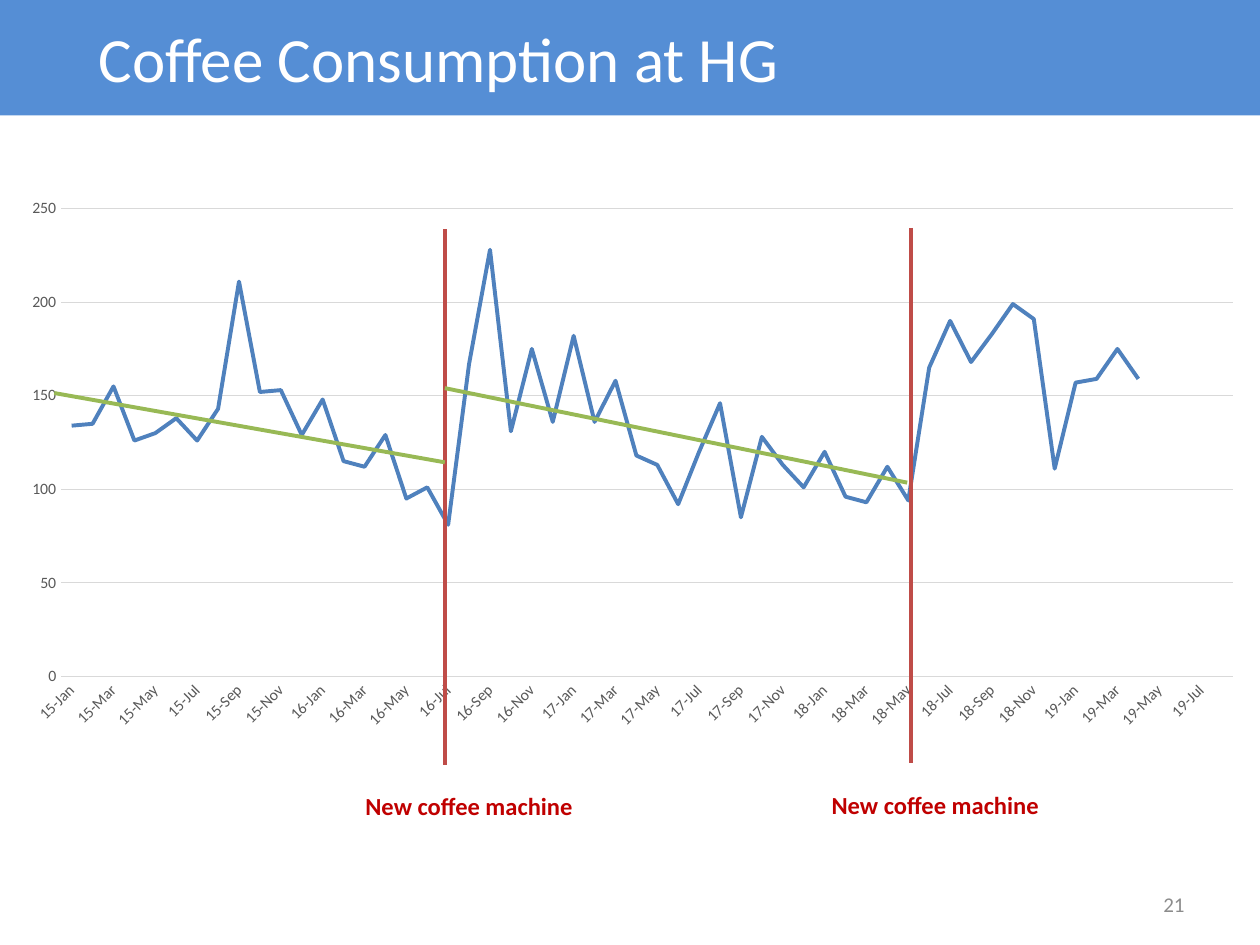
from lxml import etree
from pptx import Presentation
from pptx.chart.data import CategoryChartData
from pptx.dml.color import RGBColor
from pptx.enum.chart import XL_CHART_TYPE, XL_TICK_MARK
from pptx.enum.shapes import MSO_CONNECTOR, MSO_SHAPE
from pptx.enum.text import MSO_ANCHOR, PP_ALIGN
from pptx.oxml.ns import qn
from pptx.util import Pt

LINE_CHART = XL_CHART_TYPE.LINE
NO_TICK = XL_TICK_MARK.NONE
STRAIGHT = MSO_CONNECTOR.STRAIGHT
RECTANGLE = MSO_SHAPE.RECTANGLE
TOP, MIDDLE = MSO_ANCHOR.TOP, MSO_ANCHOR.MIDDLE
LEFT, RIGHT = PP_ALIGN.LEFT, PP_ALIGN.RIGHT

FONT = "Calibri"
WHITE = RGBColor(0xFF, 0xFF, 0xFF)
BANNER_BLUE = RGBColor(0x55, 0x8E, 0xD5)
SERIES_BLUE = RGBColor(0x4F, 0x81, 0xBD)
GRID_GRAY = RGBColor(0xD9, 0xD9, 0xD9)
AXIS_GRAY = RGBColor(0x59, 0x59, 0x59)
NUMBER_GRAY = RGBColor(0x8C, 0x8C, 0x8C)
MARKER_RED = RGBColor(0xBF, 0x4C, 0x48)
LABEL_RED = RGBColor(0xC0, 0x00, 0x00)
TREND_GREEN = RGBColor(0x98, 0xB9, 0x55)
BLACK = RGBColor(0, 0, 0)

MONTHS = ["Jan", "Feb", "Mar", "Apr", "May", "Jun",
          "Jul", "Aug", "Sep", "Oct", "Nov", "Dec"]
CATEGORIES = [f"{year}-{month}" for year in range(15, 20) for month in MONTHS][:56]
CUPS = [
    134, 135, 155, 126, 130, 138, 126, 143, 211, 152, 153, 129,
    148, 115, 112, 129, 95, 101, 81, 167, 228, 131, 175, 136,
    182, 136, 158, 118, 113, 92, 120, 146, 85, 128, 113, 101,
    120, 96, 93, 112, 94, 165, 190, 168, 183, 199, 191, 111,
    157, 159, 175, 159,
]
CUPS += [None] * (len(CATEGORIES) - len(CUPS))


def points(*lengths):
    return [Pt(length) for length in lengths]


def write_text(shape, text, size, color, bold=False, align=LEFT, anchor=TOP, wrap=True):
    frame = shape.text_frame
    frame.word_wrap = wrap
    frame.vertical_anchor = anchor
    para = frame.paragraphs[0]
    para.alignment = align
    span = para.add_run()
    span.text = text
    span.font.name = FONT
    span.font.size = Pt(size)
    span.font.bold = bold
    span.font.color.rgb = color
    return para


def add_line(page, start, end, color):
    line = page.shapes.add_connector(STRAIGHT, *points(*start, *end))
    line.line.color.rgb = color
    line.line.width = Pt(2.25)
    etree.SubElement(line._element.spPr, qn("a:effectLst"))


def add_banner(page, box, text):
    banner = page.shapes.add_shape(RECTANGLE, *points(*box))
    banner.shadow.inherit = False
    banner.fill.solid()
    banner.fill.fore_color.rgb = BANNER_BLUE
    banner.line.fill.background()
    para = write_text(banner, text, 36, WHITE, anchor=MIDDLE)
    para._p.get_or_add_pPr().set("marL", str(Pt(49.5)))


def set_plot_layout(chart, x, y, w, h):
    """Fix the inner plot area, as fractions of the chart's size."""
    plot_area = chart._chartSpace.chart.plotArea
    for old in plot_area.findall(qn("c:layout")):
        plot_area.remove(old)
    layout = etree.Element(qn("c:layout"))
    manual = etree.SubElement(layout, qn("c:manualLayout"))
    settings = [("layoutTarget", "inner"), ("xMode", "edge"), ("yMode", "edge"),
                ("x", x), ("y", y), ("w", w), ("h", h)]
    for name, value in settings:
        etree.SubElement(manual, qn(f"c:{name}")).set("val", str(value))
    plot_area.insert(0, layout)


def format_axis(axis):
    axis.major_tick_mark = NO_TICK
    axis.minor_tick_mark = NO_TICK
    font = axis.tick_labels.font
    font.name = FONT
    font.size = Pt(9)
    font.color.rgb = AXIS_GRAY


def slant_alternate_labels(axis):
    """Show every second category label, turned by 45 degrees."""
    body = axis._element.find(qn("c:txPr")).find(qn("a:bodyPr"))
    body.set("rot", str(-45 * 60000))
    body.set("vert", "horz")
    skip = etree.Element(qn("c:tickLblSkip"))
    skip.set("val", "2")
    axis._element.find(qn("c:noMultiLvlLbl")).addprevious(skip)


def add_consumption_chart(page, box):
    data = CategoryChartData()
    data.categories = CATEGORIES
    data.add_series("Series 1", CUPS)
    chart = page.shapes.add_chart(LINE_CHART, *points(*box), data).chart
    chart.has_title = False
    chart.has_legend = False
    chart.font.name = FONT
    chart.font.size = Pt(10)
    chart.font.color.rgb = BLACK
    set_plot_layout(chart, 0.036, 0.127, 0.942, 0.767)

    plot = chart.plots[0]
    plot.vary_by_categories = False
    series = plot.series[0]
    series.smooth = False
    series.format.line.color.rgb = SERIES_BLUE
    series.format.line.width = Pt(2.25)

    months, cups = chart.category_axis, chart.value_axis
    format_axis(months)
    format_axis(cups)
    slant_alternate_labels(months)
    cups.minimum_scale, cups.maximum_scale, cups.major_unit = 0, 250, 50
    cups.format.line.fill.background()
    for line in (months.format.line, cups.major_gridlines.format.line):
        line.color.rgb = GRID_GRAY
        line.width = Pt(0.75)


def add_machine_marker(page, x, top):
    """Draw a vertical line with its caption below."""
    add_line(page, (x, top), (x, top + 306), MARKER_RED)
    caption = page.shapes.add_textbox(*points(x - 52.5, top + 317.5, 136, 24.5))
    write_text(caption, "New coffee machine", 14, LABEL_RED, bold=True, wrap=False)


def add_page_number(page, box, number):
    write_text(page.shapes.add_textbox(*points(*box)), number, 12, NUMBER_GRAY,
               align=RIGHT, anchor=MIDDLE)


def main():
    deck = Presentation()
    deck.slide_width, deck.slide_height = points(720, 540)
    page = deck.slides.add_slide(deck.slide_layouts[6])
    add_consumption_chart(page, (9.4, 75, 710.6, 348.5))
    add_banner(page, (0, 0, 720, 66), "Coffee Consumption at HG")
    add_page_number(page, (632, 502, 52, 29), "21")
    add_machine_marker(page, 254.2, 131)
    add_line(page, (31, 224.6), (254.2, 264.2), TREND_GREEN)
    add_line(page, (254.2, 221.8), (518.4, 275.8), TREND_GREEN)
    add_machine_marker(page, 520.6, 130.3)
    deck.save("out.pptx")


if __name__ == "__main__":
    main()
